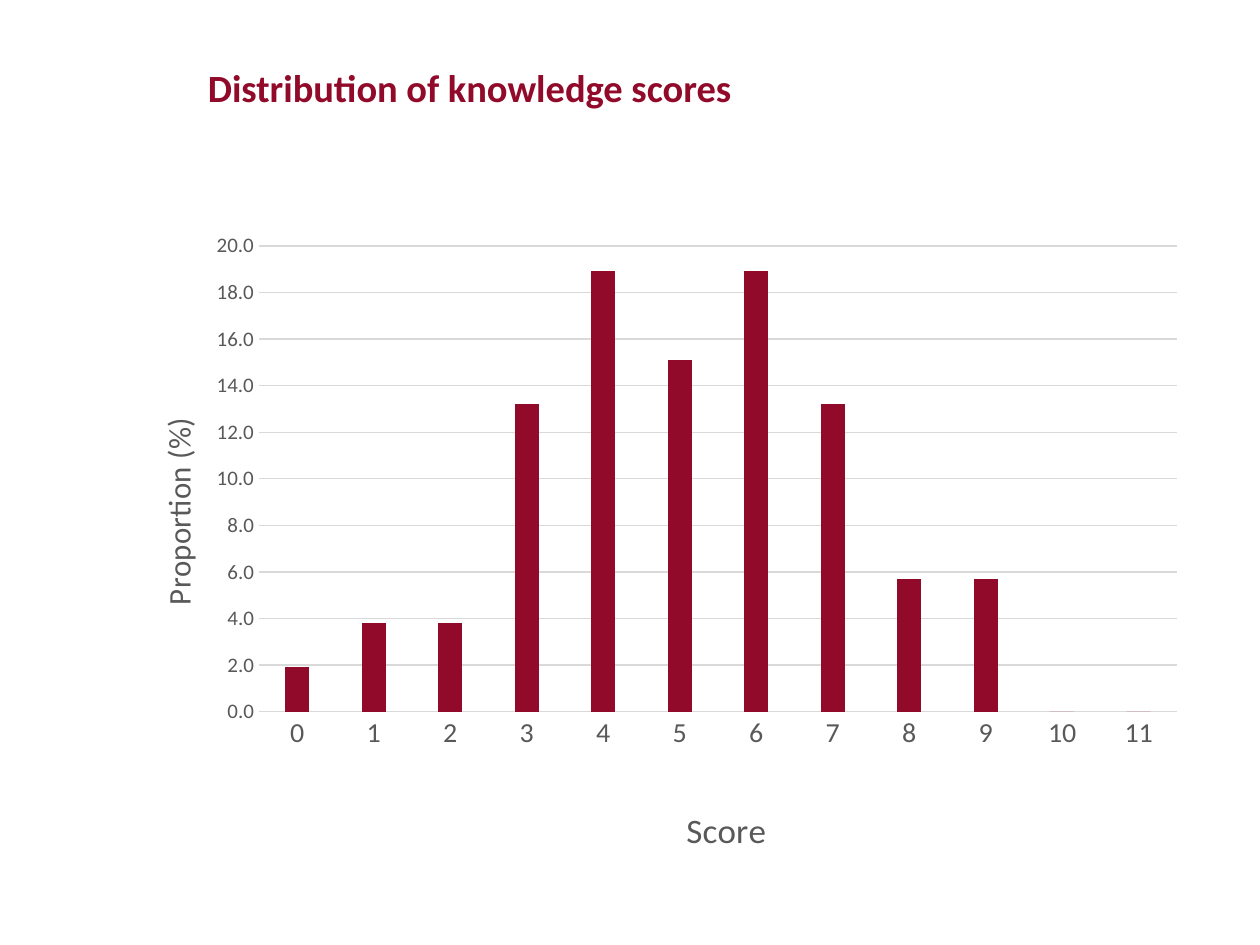
from pptx import Presentation
from pptx.chart.data import CategoryChartData
from pptx.dml.color import RGBColor
from pptx.enum.chart import XL_CHART_TYPE, XL_TICK_MARK
from pptx.enum.text import MSO_ANCHOR, PP_ALIGN
from pptx.oxml import parse_xml
from pptx.oxml.ns import nsdecls, qn
from pptx.util import Cm, Pt

TITLE = "Distribution of knowledge scores"
SCORES = [1.9, 3.8, 3.8, 13.2, 18.9, 15.1, 18.9, 13.2, 5.7, 5.7, 0, 0]
COLORS = {"accent": "910A29", "text": "595959", "grid": "D9D9D9"}
FONT = "Calibri"


def rgb(name):
    return RGBColor.from_string(COLORS[name])


def style(font, size, color="text", bold=False):
    font.name, font.size, font.bold = FONT, Pt(size), bold
    font.color.rgb = rgb(color)


def write(tf, text, size, color="text", bold=False):
    p = tf.paragraphs[0]
    r = p.add_run()
    r.text = text
    style(r.font, size, color, bold)
    return p


def layout(inner=False, **fractions):
    target = '<c:layoutTarget val="inner"/>' if inner else ""
    modes = "".join(f'<c:{k}Mode val="edge"/>' for k in "xy")
    values = "".join(f'<c:{k} val="{v}"/>' for k, v in fractions.items())
    return parse_xml(f'<c:layout {nsdecls("c")}><c:manualLayout>{target}{modes}{values}'
                     "</c:manualLayout></c:layout>")


def format_axis(axis, title, title_size, label_size, x, y):
    axis.has_title = True
    tf = axis.axis_title.text_frame
    write(tf, title, title_size)
    el = axis.axis_title._element
    for old in el.findall(qn("c:layout")):
        el.remove(old)
    el.find(qn("c:tx")).addnext(layout(x=x, y=y))
    axis.major_tick_mark = axis.minor_tick_mark = XL_TICK_MARK.NONE
    style(axis.tick_labels.font, label_size)
    return tf


def grid_line(line):
    line.color.rgb = rgb("grid")
    line.width = Pt(0.75)


prs = Presentation()
prs.slide_width, prs.slide_height = Cm(25.4), Cm(19.05)
s = prs.slides.add_slide(prs.slide_layouts[5])

title = s.shapes.title
title.left, title.top, title.width, title.height = Cm(4.19), Cm(0.43), Cm(17.02), Cm(2.62)
tf = title.text_frame
tf.word_wrap = True
tf.vertical_anchor = MSO_ANCHOR.MIDDLE
tf.margin_left, tf.margin_top, tf.margin_right, tf.margin_bottom = 0, Cm(0.13), Cm(0.25), 0
p = write(tf, TITLE, 22, "accent", True)
p.alignment = PP_ALIGN.LEFT
p.line_spacing = Pt(24)

data = CategoryChartData(number_format="###0.0")
data.categories = [str(score) for score in range(len(SCORES))]
data.add_series("Series 1", SCORES)
chart = s.shapes.add_chart(XL_CHART_TYPE.COLUMN_CLUSTERED, Cm(2.39), Cm(4.45),
                           Cm(21.77), Cm(12.95), data).chart
chart.has_legend = chart.has_title = False
chart.font.name, chart.font.size = FONT, Pt(10)

plot = chart.plots[0]
plot.gap_width, plot.overlap, plot.vary_by_categories = 219, -27, False
fill = plot.series[0].format.fill
fill.solid()
fill.fore_color.rgb = rgb("accent")

plot_area = chart._chartSpace.chart.plotArea
for old in plot_area.findall(qn("c:layout")):
    plot_area.remove(old)
plot_area.insert(0, layout(inner=True, x=0.13, y=0.04, w=0.85, h=0.74))

cat = chart.category_axis
format_axis(cat, "Score", 20, 16, 0.52, 0.92)
grid_line(cat.format.line)

val = chart.value_axis
tf = format_axis(val, "Proportion (%)", 18, 12, 0.03, 0.31)
body = tf._txBody.bodyPr
body.set("rot", "-5400000")
body.set("vert", "horz")
val.minimum_scale, val.maximum_scale, val.major_unit = 0, 20, 2
val.tick_labels.number_format = "###0.0"
val.tick_labels.number_format_is_linked = False
val.format.line.fill.background()
val.has_major_gridlines = True
grid_line(val.major_gridlines.format.line)

prs.save("out.pptx")
